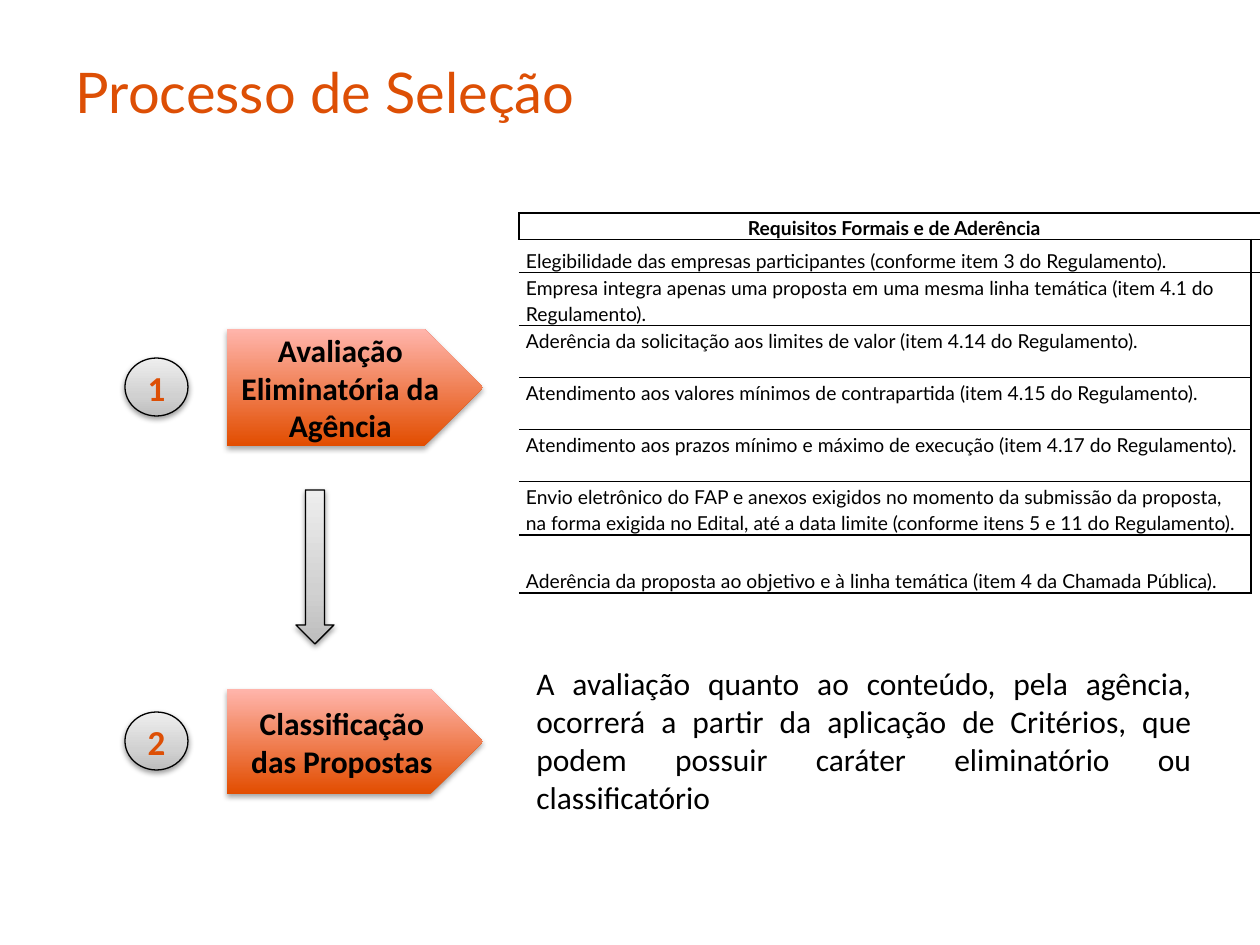
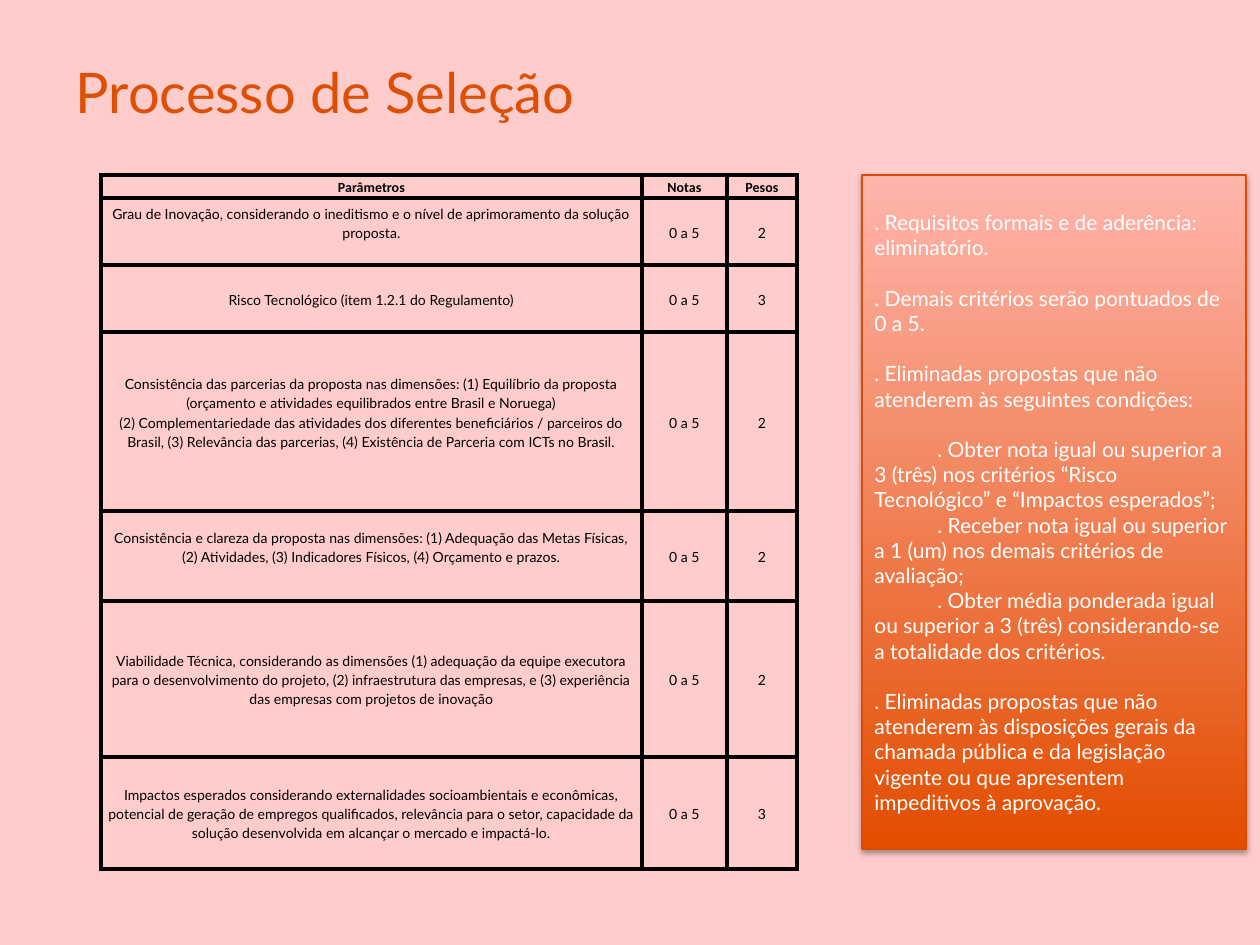
from copy import deepcopy

from lxml import etree
from pptx import Presentation, util as u
from pptx.dml.color import RGBColor
from pptx.enum import shapes, text
from pptx.oxml import ns

HUES = {"title": "DD4F05", "edge": "DD4C00", "ink": "000000", "white": "FFFFFF", "rose": "FFCCCC"}
GRAY = [(0, "BDBDBD"), (0.35, "D1D1D1"), (1, "EEEEEE")]
FIRE = [(0, "E24D00"), (1, "FFB5AC")]
PLAIN = "{2D5ABB26-0587-4C30-8999-92F81FD0307C}"
KIND = shapes.MSO_SHAPE
ALIGN = text.PP_ALIGN
ANCHOR = text.MSO_ANCHOR

FORMAL = [
    ("Elegibilidade das empresas participantes (conforme item 3 do Regulamento).", ANCHOR.BOTTOM),
    ("Empresa integra apenas uma proposta em uma mesma linha temática (item 4.1 do Regulamento).", ANCHOR.BOTTOM),
    ("Aderência da solicitação aos limites de valor (item 4.14 do Regulamento).", ANCHOR.TOP),
    ("Atendimento aos valores mínimos de contrapartida (item 4.15 do Regulamento).", ANCHOR.TOP),
    ("Atendimento aos prazos mínimo e máximo de execução (item 4.17 do Regulamento).", ANCHOR.TOP),
    ("Envio eletrônico do FAP e anexos exigidos no momento da submissão da proposta, na forma exigida "
     "no Edital, até a data limite (conforme itens 5 e 11 do Regulamento).", ANCHOR.BOTTOM),
    ("Aderência da proposta ao objetivo e à linha temática (item 4 da Chamada Pública).", ANCHOR.BOTTOM),
]

SCORES = [
    ("Grau de Inovação, considerando o ineditismo e o nível de aprimoramento da solução proposta.", "2", 19),
    ("Risco Tecnológico (item 1.2.1 do Regulamento)", "3", 0),
    ("Consistência das parcerias da proposta nas dimensões: (1) Equilíbrio da proposta (orçamento e "
     "atividades equilibrados entre Brasil e Noruega)\n(2) Complementariedade das atividades dos "
     "diferentes beneficiários / parceiros do Brasil, (3) Relevância das parcerias, (4) Existência de "
     "Parceria com ICTs no Brasil.", "2", 19),
    ("Consistência e clareza da proposta nas dimensões: (1) Adequação das Metas Físicas, (2) Atividades, "
     "(3) Indicadores Físicos, (4) Orçamento e prazos.", "2", 19),
    ("Viabilidade Técnica, considerando as dimensões (1) adequação da equipe executora para o "
     "desenvolvimento do projeto, (2) infraestrutura das empresas, e (3) experiência das empresas com "
     "projetos de inovação", "2", 0),
    ("Impactos esperados considerando externalidades socioambientais e econômicas, potencial de geração "
     "de empregos qualificados, relevância para o setor, capacidade da solução desenvolvida em alcançar "
     "o mercado e impactá-lo.", "3", 0),
]

RULES = [
    (". Requisitos formais e de aderência: eliminatório.", 0, 0),
    (". Demais critérios serão pontuados de 0 a 5.", 1, 0),
    (". Eliminadas propostas que não atenderem às seguintes condições:", 1, 0),
    (". Obter nota igual ou superior a 3 (três) nos critérios “Risco Tecnológico” e “Impactos esperados”;", 1, 63),
    (". Receber nota igual ou superior a 1 (um) nos demais critérios de avaliação;", 0, 63),
    (". Obter média ponderada igual ou superior a 3 (três) considerando-se a totalidade dos critérios.", 0, 63),
    (". Eliminadas propostas que não atenderem às disposições gerais da chamada pública e da legislação "
     "vigente ou que apresentem impeditivos à aprovação.", 1, 0),
]


def px(n):
    return u.Emu(round(n * 914400 / 126))


def rgb(name):
    return RGBColor.from_string(HUES.get(name, name))


def style(frame, size, face, hue="ink", bold=False, align=ALIGN.LEFT):
    for para in frame.paragraphs:
        para.alignment = align
        for run in para.runs:
            run.font.size = u.Pt(size)
            run.font.name = face
            run.font.bold = bold
            run.font.color.rgb = rgb(hue)


def start(deck, back):
    slide = deck.slides.add_slide(deck.slide_layouts[5])
    slide.background.fill.solid()
    slide.background.fill.fore_color.rgb = rgb(back)
    title = slide.shapes.title
    title.left, title.top, title.width, title.height = map(px, (63, 38, 1134, 107))
    title.text_frame.text = "Processo de Seleção"
    title.text_frame.vertical_anchor = ANCHOR.MIDDLE
    style(title.text_frame, 32, "Lato", "title")
    return slide


def shade(shape, drop, alpha):
    shape.shadow.inherit = False
    effects = shape._element.spPr.find(ns.qn("a:effectLst"))
    cast = etree.SubElement(effects, ns.qn("a:outerShdw"), blurRad="40000", dist=str(drop),
                            dir="5400000", rotWithShape="0")
    hue = etree.SubElement(cast, ns.qn("a:srgbClr"), val=HUES["ink"])
    etree.SubElement(hue, ns.qn("a:alpha"), val=str(alpha))


def block(slide, kind, box, stops, line=None):
    shape = slide.shapes.add_shape(kind, *map(px, box))
    fill = shape.fill
    fill.gradient()
    fill.gradient_angle = 90
    marks = shape._element.spPr.find(".//" + ns.qn("a:gsLst"))
    while len(marks) < len(stops):
        marks.insert(1, deepcopy(marks[0]))
    for mark, (place, hue) in zip(fill.gradient_stops, stops):
        mark.position = place
        mark.color.rgb = rgb(hue)
    if line:
        shape.line.color.rgb = rgb(line)
        shape.line.width = u.Pt(0.75)
    else:
        shape.line.fill.background()
    shade(shape, *((20000, 38000) if stops is GRAY else (23000, 35000)))
    shape.text_frame.word_wrap = True
    shape.text_frame.vertical_anchor = ANCHOR.MIDDLE
    return shape


def step(slide, mid, tall, mark, label):
    disc = block(slide, KIND.FLOWCHART_CONNECTOR, (125, mid - 29, 63, 58), GRAY, "ink")
    frame = disc.text_frame
    frame.margin_left = frame.margin_right = 0
    frame.text = mark
    style(frame, 20, "Calibri", "title", True, ALIGN.CENTER)
    plate = block(slide, KIND.PENTAGON, (227, mid - tall // 2, 256, tall), FIRE)
    plate.text_frame.text = label
    style(plate.text_frame, 18, "Calibri", bold=True, align=ALIGN.CENTER)


def grid(slide, left, top, cols, rows):
    box = map(px, (left, top, sum(cols), sum(rows)))
    frame = slide.shapes.add_table(len(rows), len(cols), *box)
    table = frame.table
    table.first_row = table.horz_banding = False
    table._tbl.tblPr.find(ns.qn("a:tableStyleId")).text = PLAIN
    for col, wide in zip(table.columns, cols):
        col.width = px(wide)
    for row, tall in zip(table.rows, rows):
        row.height = px(tall)
    return table


def rule(cell, sides, width):
    props = cell._tc.get_or_add_tcPr()
    for side in sides:
        line = etree.SubElement(props, ns.qn("a:ln" + side), w=str(u.Pt(width)))
        fill = etree.SubElement(line, ns.qn("a:solidFill"))
        etree.SubElement(fill, ns.qn("a:srgbClr"), val=HUES["ink"])
    cell.fill.background()


def put(cell, words, size, face="Lato", bold=False, align=ALIGN.CENTER,
        anchor=ANCHOR.MIDDLE, foot=0):
    cell.margin_left = cell.margin_right = px(7)
    cell.margin_top, cell.margin_bottom = 0, px(foot)
    cell.vertical_anchor = anchor
    cell.text_frame.text = words
    style(cell.text_frame, size, face, bold=bold, align=align)
    for para in cell.text_frame.paragraphs:
        para.line_spacing = 1.15
        if not words:
            etree.SubElement(para._p, ns.qn("a:endParaRPr"), sz=str(size * 100))


def stages(deck):
    slide = start(deck, "white")
    step(slide, 387, 117, "1", "Avaliação Eliminatória da Agência")
    step(slide, 741, 105, "2", "Classificação das Propostas")
    block(slide, KIND.DOWN_ARROW, (296, 490, 38, 154), GRAY, "ink")
    note = slide.shapes.add_textbox(*map(px, (524, 658, 680, 165))).text_frame
    note.word_wrap = True
    note.text = ("A avaliação quanto ao conteúdo, pela agência, ocorrerá a partir da aplicação de "
                 "Critérios, que podem possuir caráter eliminatório ou classificatório")
    style(note, 18, "Calibri", align=ALIGN.JUSTIFY)
    table = grid(slide, 519, 213, (732, 10), (26, 33, 53, 52, 52, 52, 53, 58))
    head = table.cell(0, 0)
    head.merge(table.cell(0, 1))
    put(head, "Requisitos Formais e de Aderência", 11, bold=True, anchor=ANCHOR.BOTTOM)
    for col in range(2):
        rule(table.cell(0, col), "LRTB", 1)
    for row, (words, anchor) in enumerate(FORMAL, 1):
        item, rest = table.cell(row, 0), table.cell(row, 1)
        put(item, words, 11, align=ALIGN.LEFT, anchor=anchor)
        rule(item, "RTB", 1)
        put(rest, "", 11)
        rest.margin_left = rest.margin_right = 0
        rule(rest, "LT" if row == 1 else "L", 1)


def marks(deck):
    slide = start(deck, "rose")
    panel = block(slide, KIND.RECTANGLE, (862, 175, 384, 674), FIRE, "edge").text_frame
    panel.text = "\n".join(words for words, gap, indent in RULES)
    style(panel, 12, "Lato", "white")
    for para, (words, gap, indent) in zip(panel.paragraphs, RULES):
        if gap:
            para.space_before = u.Pt(14.4)
        if indent:
            para._p.get_or_add_pPr().set("indent", str(px(indent)))
    table = grid(slide, 101, 175, (541, 85, 70), (23, 67, 67, 179, 90, 156, 112))
    for col, words in enumerate(("Parâmetros", "Notas", "Pesos")):
        put(table.cell(0, col), words, 8, "Calibri", True)
    for row, (words, weight, foot) in enumerate(SCORES, 1):
        put(table.cell(row, 0), words, 8, foot=foot)
        put(table.cell(row, 1), "0 a 5", 8)
        put(table.cell(row, 2), weight, 8)
    for cell in table.iter_cells():
        rule(cell, "LRTB", 2.25)


def main():
    deck = Presentation()
    deck.slide_width, deck.slide_height = px(1260), px(945)
    stages(deck)
    marks(deck)
    deck.save("out.pptx")


if __name__ == "__main__":
    main()
